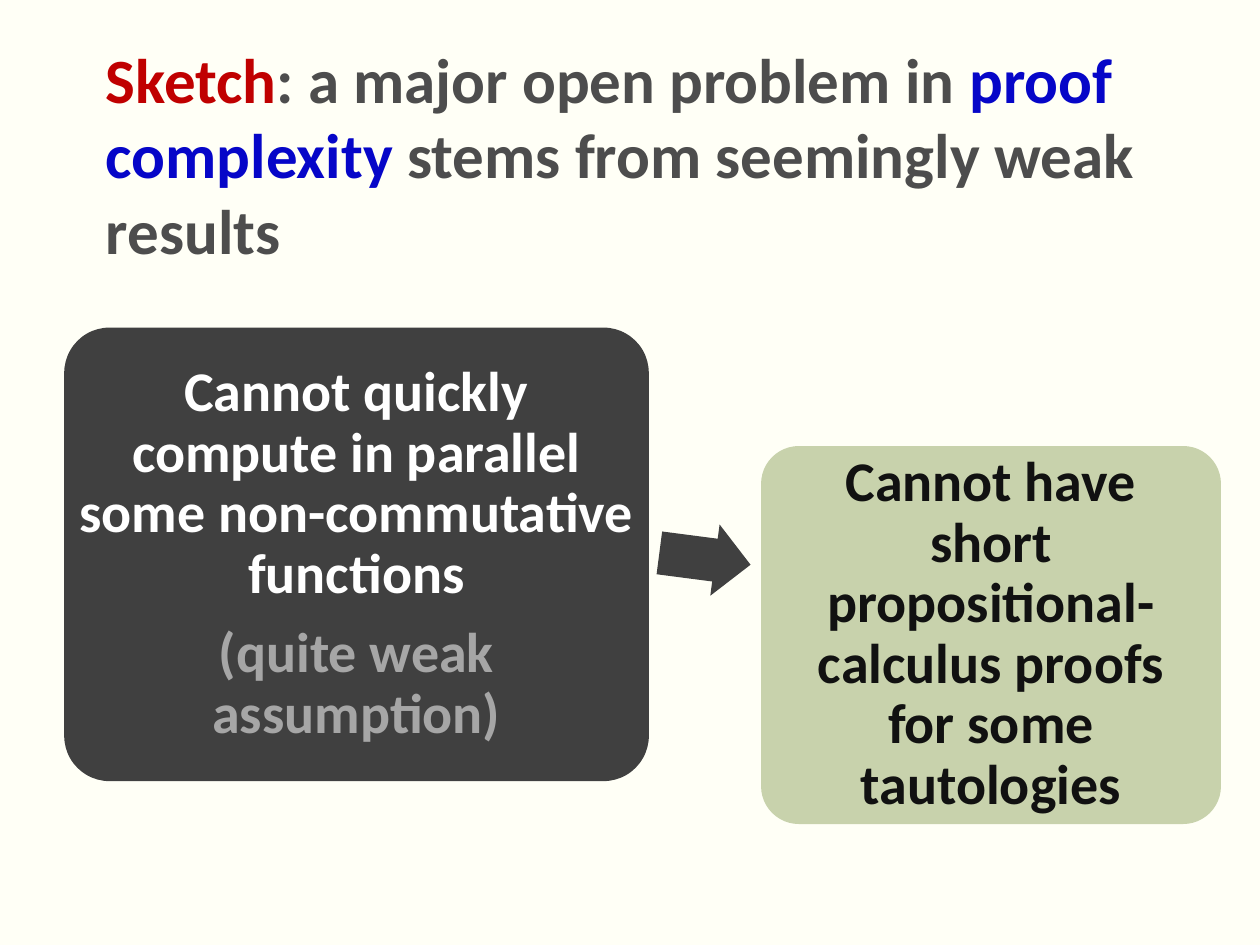
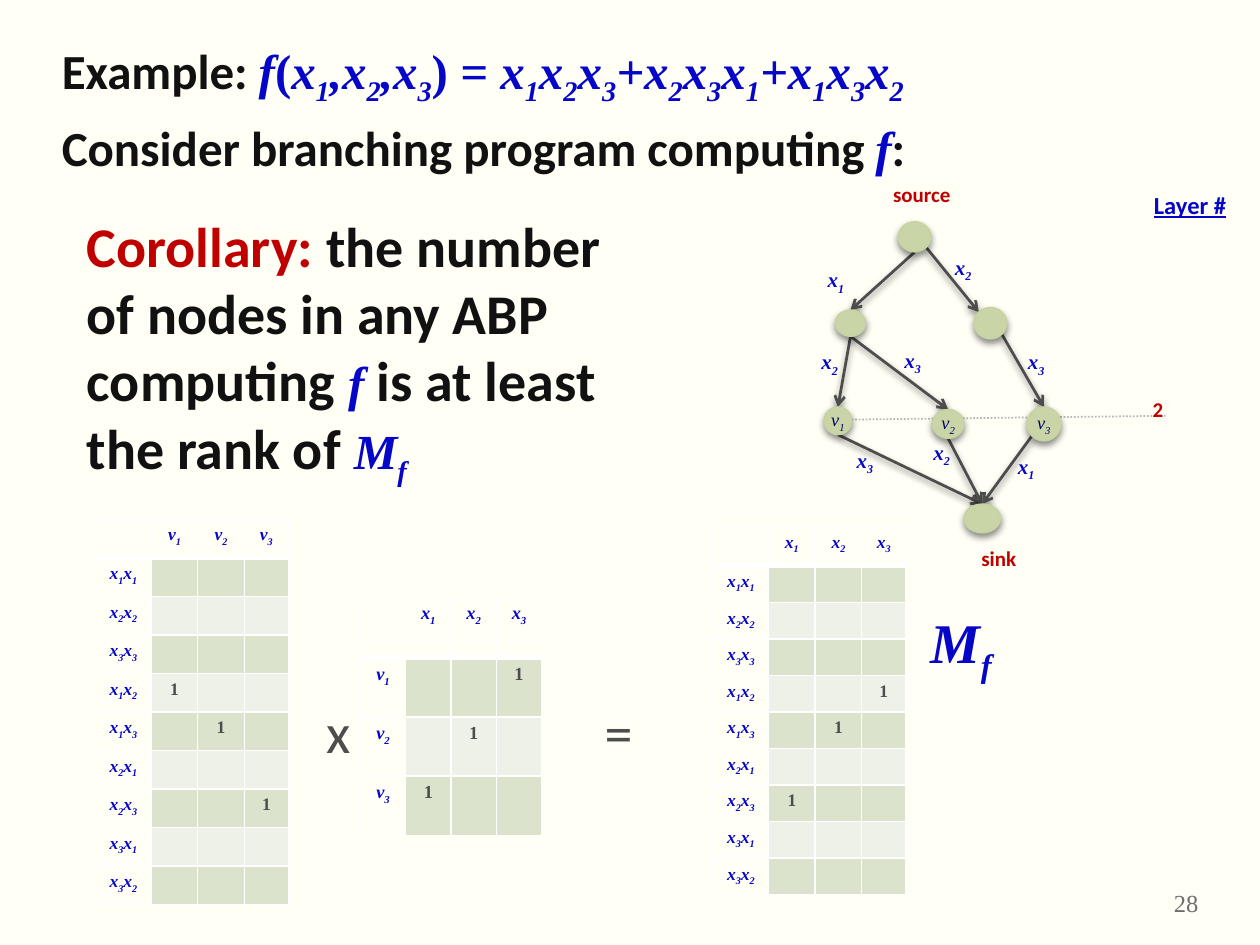
from math import cos, radians, sin

from lxml import etree
from pptx import Presentation
from pptx import util as u
from pptx.dml.color import RGBColor
from pptx.enum import dml, shapes, text
from pptx.oxml import ns

PAPER = RGBColor(0xFF, 0xFF, 0xF6)
WHITE = RGBColor(0xFF, 0xFF, 0xFF)
BLACK = RGBColor(0x11, 0x11, 0x11)
DARK = RGBColor(0x40, 0x40, 0x40)
GRAY = RGBColor(0x4D, 0x4D, 0x4D)
PALE = RGBColor(0xA6, 0xA6, 0xA6)
DOTS = RGBColor(0xB8, 0xB8, 0xB8)
FOOT = RGBColor(0x6E, 0x6E, 0x6E)
RED = RGBColor(0xC0, 0x00, 0x00)
BLUE = RGBColor(0x06, 0x06, 0xC8)
NAVY = RGBColor(0x00, 0x00, 0x66)
MOSS = RGBColor(0xC8, 0xD2, 0xAC)
LEAF = RGBColor(0xC9, 0xD5, 0xA7)
RIM = RGBColor(0xC6, 0xD2, 0xA1)
BANDS = RGBColor(0xDB, 0xE3, 0xCD), RGBColor(0xEE, 0xF1, 0xE8)
SANS, SERIF = "Calibri", "Times New Roman"
MID = text.PP_ALIGN.CENTER

PAIRS = ["x_1x_1", "x_2x_2", "x_3x_3", "x_1x_2", "x_1x_3",
         "x_2x_1", "x_2x_3", "x_3x_1", "x_3x_2"]
XS = ["x_1", "x_2", "x_3"]
VS = ["v_1", "v_2", "v_3"]

NODES = {
    "source": (7.13, 1.76, 0.26, 0.24),
    "left": (6.63, 2.46, 0.24, 0.21),
    "right": (7.73, 2.44, 0.26, 0.25),
    "v_1": (6.54, 3.23, 0.22, 0.22),
    "v_2": (7.4, 3.25, 0.25, 0.23),
    "v_3": (8.15, 3.23, 0.27, 0.27),
    "sink": (7.65, 4, 0.29, 0.23),
}
# Parent, angle it leaves at, child, angle it arrives at, label, label place
EDGES = [
    ("source", 90, "left", 270, "x_1", 6.47, 2.07),
    ("source", 45, "right", 225, "x_2", 7.48, 1.97),
    ("left", 90, "v_1", 270, "x_2", 6.42, 2.72),
    ("left", 90, "v_2", 270, "x_3", 7.08, 2.71),
    ("right", 45, "v_3", 270, "x_3", 8.06, 2.72),
    ("v_1", 90, "sink", 270, "x_3", 6.7, 3.5),
    ("v_2", 90, "sink", 270, "x_2", 7.31, 3.44),
    ("v_3", 135, "sink", 270, "x_1", 7.98, 3.55),
]


def inches(box):
    return [u.Inches(n) for n in box]


def add(parent, tag, **attrs):
    return etree.SubElement(parent, ns.qn("a:" + tag), **attrs)


def say(par, words, size, ink, bold=True, face=SANS, slant=False):
    run = par.add_run()
    run.text = words
    font = run.font
    font.size, font.name, font.bold, font.italic = u.Pt(size), face, bold, slant
    font.color.rgb = ink
    return run


def math(par, words, size, ink=BLUE, bold=True):
    """Italic formula; the character after each _ is a subscript."""
    first, *rest = words.split("_")
    say(par, first, size, ink, bold, SERIF, True)
    for part in rest:
        low = say(par, part[0], size, ink, bold, SERIF, True)
        low.font._element.set("baseline", "-25000")
        if part[1:]:
            say(par, part[1:], size, ink, bold, SERIF, True)


def note(slide, *box):
    """Add a wrapping text box and return its paragraph."""
    frame = slide.shapes.add_textbox(*inches(box)).text_frame
    frame.word_wrap = True
    return frame.paragraphs[0]


def shade(shape):
    """Soft drop shadow straight below."""
    glow = add(add(shape._element.spPr, "effectLst"), "outerShdw",
               blurRad=str(u.Pt(4)), dist=str(u.Pt(2)), dir="5400000",
               rotWithShape="0")
    add(add(glow, "srgbClr", val="000000"), "alpha", val="45000")


def join(slide, start, end, ink, width):
    line = slide.shapes.add_connector(shapes.MSO_CONNECTOR.STRAIGHT,
                                      *inches((*start, *end)))
    line.line.color.rgb = ink
    line.line.width = u.Pt(width)
    return line


def form(slide, kind, box, fill):
    shape = slide.shapes.add_shape(kind, *inches(box))
    shape.fill.solid()
    shape.fill.fore_color.rgb = fill
    shape.line.fill.background()
    return shape


def page(deck, box, count=1):
    """New slide and the unbulleted paragraphs of its body."""
    slide = deck.slides.add_slide(deck.slide_layouts[1])
    title = slide.shapes.title._element
    title.getparent().remove(title)
    body = slide.placeholders[1]
    body.left, body.top, body.width, body.height = inches(box)
    frame = body.text_frame
    frame.auto_size = text.MSO_AUTO_SIZE.NONE
    for _ in range(count - 1):
        frame.add_paragraph()
    for par in frame.paragraphs:
        props = par._p.get_or_add_pPr()
        props.set("marL", "0")
        props.set("indent", "0")
        add(props, "buNone")
    return slide, frame.paragraphs


def card(slide, box, fill, pad, lines):
    shape = form(slide, shapes.MSO_SHAPE.ROUNDED_RECTANGLE, box, fill)
    shape.shadow.inherit = False
    shape.adjustments[0] = 0.1
    frame = shape.text_frame
    frame.word_wrap = True
    frame.vertical_anchor = text.MSO_ANCHOR.MIDDLE
    frame.margin_left = frame.margin_right = u.Inches(pad)
    frame.margin_top = frame.margin_bottom = u.Inches(pad)
    for n, (words, ink) in enumerate(lines):
        par = frame.add_paragraph() if n else frame.paragraphs[0]
        par.alignment = MID
        par.line_spacing = 0.9
        par.space_after = u.Pt(11)
        say(par, words, 32, ink)


def sketch(deck):
    slide, (par,) = page(deck, (0.74, 0.27, 8.58, 6.47))
    say(par, "Sketch", 36, RED)
    say(par, ": a major open problem in ", 36, GRAY)
    say(par, "proof complexity ", 36, BLUE)
    say(par, "stems from seemingly weak results", 36, GRAY)
    card(slide, (0.51, 2.6, 4.64, 3.6), DARK, 0, [
        ("Cannot quickly compute in parallel some non-commutative functions",
         WHITE),
        ("(quite weak assumption)", PALE)])
    arrow = form(slide, shapes.MSO_SHAPE.RIGHT_ARROW,
                 (5.23, 4.15, 0.73, 0.57), DARK)
    arrow.shadow.inherit = False
    arrow.adjustments[0] = 0.6
    arrow.rotation = 7.4
    card(slide, (6.04, 3.54, 3.65, 3), MOSS, 0.13, [
        ("Cannot have short propositional-calculus proofs for some tautologies",
         BLACK)])


def rim(name, angle):
    """Point on a node's outline."""
    x, y, w, h = NODES[name]
    turn = radians(angle)
    return x + w / 2 * (1 + cos(turn)), y + h / 2 * (1 + sin(turn))


def graph(slide):
    layer = join(slide, (6.76, 3.33), (9.25, 3.3), DOTS, 1)
    layer.line.dash_style = dml.MSO_LINE.ROUND_DOT
    add(layer._element.spPr, "effectLst")
    for start, out, end, into, name, x, y in EDGES:
        edge = join(slide, rim(start, out), rim(end, into), GRAY, 1.57)
        add(edge.line._get_or_add_ln(), "tailEnd", type="arrow")
        shade(edge)
        math(note(slide, x, y, 0.45, 0.3), name, 12)
    for name, box in NODES.items():
        node = form(slide, shapes.MSO_SHAPE.OVAL, box, LEAF)
        node.line.color.rgb = RIM
        node.line.width = u.Pt(0.75)
        shade(node)
        if name in VS:
            frame = node.text_frame
            frame.word_wrap = False
            frame.vertical_anchor = text.MSO_ANCHOR.MIDDLE
            frame.margin_left = frame.margin_right = 0
            frame.margin_top = frame.margin_bottom = 0
            frame.paragraphs[0].alignment = MID
            math(frame.paragraphs[0], name, 10.5, NAVY, False)
    for words, x, y in [("source", 6.99, 1.39), ("2", 9.05, 3.1),
                        ("sink", 7.69, 4.28)]:
        say(note(slide, x, y, 0.86, 0.3), words, 12, RED)
    head = say(note(slide, 9.06, 1.46, 0.86, 0.34), "Layer #", 14, BLUE)
    head.font.underline = True


def edge(cell, heavy):
    """White cell borders, with a thick bottom one under the header."""
    for side in "LRTB":
        width = 3 if heavy and side == "B" else 1
        line = add(cell._tc.get_or_add_tcPr(), "ln" + side,
                   w=str(u.Pt(width)))
        add(add(line, "solidFill"), "srgbClr", val=str(WHITE))


def matrix(slide, box, head, widths, tops, sides, ones, size):
    """Labelled 0/1 matrix; ones holds the (side, top) labels set to 1."""
    table = slide.shapes.add_table(len(sides) + 1, len(tops) + 1,
                                   *inches(box)).table
    table.first_row = table.horz_banding = False
    for col, width in zip(table.columns, widths):
        col.width = u.Inches(width)
    step = (box[3] - head) / len(sides)
    for r, side in enumerate(["", *sides]):
        table.rows[r].height = u.Inches(step if r else head)
        for c, top in enumerate(["", *tops]):
            cell = table.cell(r, c)
            edge(cell, r == 0)
            par = cell.text_frame.paragraphs[0]
            par.alignment = MID
            if r and c:
                cell.fill.solid()
                cell.fill.fore_color.rgb = BANDS[(r - 1) % 2]
                if (side, top) in ones:
                    say(par, "1", size, GRAY, face=SERIF)
            else:
                cell.fill.background()
                if side or top:
                    math(par, side or top, size)
            add(par._p, "endParaRPr", sz=str(int(size * 100)))


def product(slide):
    wide = (0.44, 0.37, 0.37, 0.35)
    matrix(slide, (0.76, 4.12, 1.53, 3.06), 0.31, wide, VS, PAIRS,
           {("x_1x_2", "v_1"), ("x_1x_3", "v_2"), ("x_2x_3", "v_3")}, 10)
    matrix(slide, (2.86, 4.74, 1.44, 1.89), 0.48, [0.36] * 4, XS, VS,
           {("v_1", "x_3"), ("v_2", "x_2"), ("v_3", "x_1")}, 10.5)
    matrix(slide, (5.66, 4.18, 1.53, 2.92), 0.31, wide, XS, PAIRS,
           {("x_1x_2", "x_3"), ("x_1x_3", "x_2"), ("x_2x_3", "x_1")}, 10)
    for sign, x in [("x", 2.49), ("=", 4.7)]:
        say(note(slide, x, 5.49, 0.23, 0.64), sign, 32, GRAY, False)
    math(note(slide, 7.29, 4.77, 0.7, 0.64), "M_f", 32)


def claim(slide):
    par = note(slide, 0.59, 1.63, 4.49, 2.26)
    say(par, "Corollary: ", 32, RED)
    say(par, "the number of nodes in any ABP computing ", 32, BLACK)
    math(par, "f", 28)
    say(par, " is at least the rank of ", 32, BLACK)
    math(par, "M_f", 28)


def example(deck):
    slide, (top, low) = page(deck, (0.39, 0.27, 8.87, 2.6), 2)
    say(top, "Example: ", 28, BLACK)
    math(top, "f", 28)
    say(top, "(", 28, BLUE, face=SERIF)
    math(top, "x_1,x_2,x_3", 28)
    say(top, ")", 28, BLUE, face=SERIF)
    math(top, " = x_1x_2x_3+x_2x_3x_1+x_1x_3x_2", 28)
    say(low, "Consider branching program computing ", 28, BLACK)
    math(low, "f", 28)
    say(low, ":", 28, BLACK)
    graph(slide)
    product(slide)
    claim(slide)
    number = note(slide, 9.08, 7, 0.67, 0.33)
    number.alignment = MID
    say(number, "28", 14, FOOT, False, SERIF)


def main():
    deck = Presentation()
    deck.slide_width, deck.slide_height = u.Inches(10), u.Inches(7.5)
    fill = deck.slide_master.background.fill
    fill.solid()
    fill.fore_color.rgb = PAPER
    sketch(deck)
    example(deck)
    deck.save("out.pptx")


if __name__ == "__main__":
    main()
